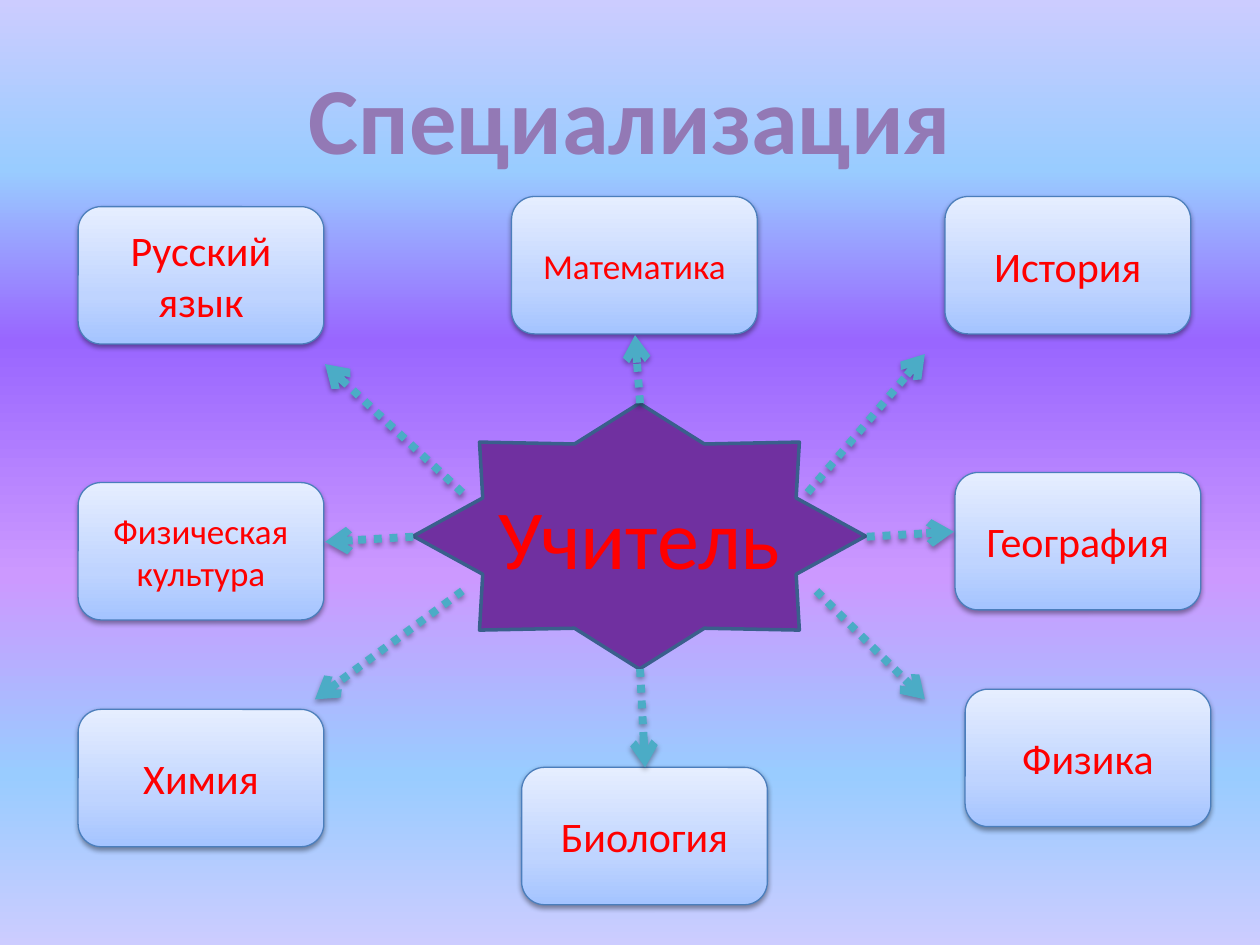
from typing import NamedTuple

from lxml import etree
from pptx import Presentation
from pptx.dml.color import RGBColor
from pptx.enum.dml import MSO_LINE
from pptx.enum.shapes import MSO_CONNECTOR, MSO_SHAPE
from pptx.enum.text import MSO_ANCHOR, PP_ALIGN
from pptx.oxml.ns import qn
from pptx.util import Inches, Pt

ROUNDED = MSO_SHAPE.ROUNDED_RECTANGLE
STAR = MSO_SHAPE.STAR_8_POINT
STRAIGHT = MSO_CONNECTOR.STRAIGHT
DOTTED = MSO_LINE.ROUND_DOT
MIDDLE = MSO_ANCHOR.MIDDLE
CENTER = PP_ALIGN.CENTER

FONT = "Calibri"
RED = RGBColor(0xFF, 0x00, 0x00)
LILAC = RGBColor(0x93, 0x79, 0xB5)
PURPLE = RGBColor(0x70, 0x30, 0xA0)
STAR_EDGE = RGBColor(0x3A, 0x5F, 0x8C)
CARD_EDGE = RGBColor(0x4B, 0x7E, 0xBC)
TEAL = RGBColor(0x4B, 0xAC, 0xC6)
BLACK = RGBColor(0x00, 0x00, 0x00)

SKY_STOPS = [(0, "CCCCFF"), (18, "99CCFF"), (36, "9966FF"),
             (61, "CC99FF"), (82, "99CCFF"), (100, "CCCCFF")]
CARD_STOPS = [(0, "A4C4FF"), (35, "BFD4FF"), (100, "E6EEFF")]
CARD_WIDTH, CARD_HEIGHT = 1.95, 1.09


class Subject(NamedTuple):
    name: str
    left: float
    top: float
    size: int = 24


class Ray(NamedTuple):
    x1: float
    y1: float
    x2: float
    y2: float


SUBJECTS = [
    Subject("Русский язык", 0.62, 1.64),
    Subject("Физика", 7.66, 5.47),
    Subject("Биология", 4.14, 6.09),
    Subject("Химия", 0.62, 5.63),
    Subject("Физическая культура", 0.62, 3.83, 20),
    Subject("История", 7.5, 1.56),
    Subject("Математика", 4.06, 1.56, 20),
    Subject("География", 7.58, 3.75),
]

RAYS = [
    Ray(3.67, 3.91, 2.58, 2.89),
    Ray(3.28, 4.26, 2.58, 4.3),
    Ray(6.41, 3.91, 7.34, 2.81),
    Ray(6.48, 4.69, 7.34, 5.55),
    Ray(3.67, 4.69, 2.5, 5.55),
    Ray(6.88, 4.26, 7.57, 4.22),
    Ray(5.08, 5.31, 5.12, 6.09),
    Ray(5.08, 3.2, 5.04, 2.66),
]


def add_color(parent, color) -> etree._Element:
    return etree.SubElement(parent, qn("a:srgbClr"), val=str(color))


def set_gradient(fill, element, stops: list, angle: int) -> None:
    fill.gradient()
    fill.gradient_angle = angle
    stop_list = next(element.iter(qn("a:gsLst")))
    for stop in list(stop_list):
        stop_list.remove(stop)
    for position, color in stops:
        stop = etree.SubElement(stop_list, qn("a:gs"), pos=str(position * 1000))
        add_color(stop, color)


def add_shadow(element, opacity: int, distance: float) -> None:
    effects = etree.SubElement(element.spPr, qn("a:effectLst"))
    shadow = etree.SubElement(
        effects, qn("a:outerShdw"), blurRad=str(Pt(3.1)),
        dist=str(Pt(distance)), dir="5400000", rotWithShape="0")
    color = add_color(shadow, BLACK)
    etree.SubElement(color, qn("a:alpha"), val=str(opacity * 1000))


def set_text(shape, text: str, size: int, color: RGBColor,
             bold: bool = False, wrap: bool = True) -> None:
    frame = shape.text_frame
    frame.word_wrap = wrap
    frame.vertical_anchor = MIDDLE
    paragraph = frame.paragraphs[0]
    paragraph.text = text
    paragraph.alignment = CENTER
    font = paragraph.font
    font.name, font.size, font.bold = FONT, Pt(size), bold
    font.color.rgb = color


def add_title(slide, text: str) -> None:
    title = slide.shapes.add_textbox(Inches(0.5), Inches(0.3), Inches(9), Inches(1.25))
    set_text(title, text, 54, LILAC, bold=True)


def add_center(slide, text: str) -> None:
    star = slide.shapes.add_shape(
        STAR, Inches(3.28), Inches(3.2), Inches(3.59), Inches(2.11))
    star.shadow.inherit = False
    star.fill.solid()
    star.fill.fore_color.rgb = PURPLE
    star.line.color.rgb = STAR_EDGE
    star.line.width = Pt(2)
    set_text(star, text, 48, RED, wrap=False)


def add_subject(slide, subject: Subject) -> None:
    card = slide.shapes.add_shape(
        ROUNDED, Inches(subject.left), Inches(subject.top),
        Inches(CARD_WIDTH), Inches(CARD_HEIGHT))
    set_gradient(card.fill, card._element, CARD_STOPS, 90)
    card.line.color.rgb = CARD_EDGE
    card.line.width = Pt(0.75)
    add_shadow(card._element, 38, 1.6)
    set_text(card, subject.name, subject.size, RED)


def add_ray(slide, ray: Ray) -> None:
    arrow = slide.shapes.add_connector(STRAIGHT, *(Inches(value) for value in ray))
    arrow.line.color.rgb = TEAL
    arrow.line.width = Pt(4.5)
    arrow.line.dash_style = DOTTED
    etree.SubElement(arrow.line._get_or_add_ln(), qn("a:tailEnd"), type="arrow")
    add_shadow(arrow._element, 35, 1.8)


def main() -> None:
    presentation = Presentation()
    presentation.slide_width = Inches(10)
    presentation.slide_height = Inches(7.5)
    slide = presentation.slides.add_slide(presentation.slide_layouts[6])
    set_gradient(slide.background.fill, slide._element, SKY_STOPS, 270)
    add_title(slide, "Специализация")
    add_center(slide, "Учитель")
    for subject in SUBJECTS:
        add_subject(slide, subject)
    for ray in RAYS:
        add_ray(slide, ray)
    presentation.save("out.pptx")


if __name__ == "__main__":
    main()
